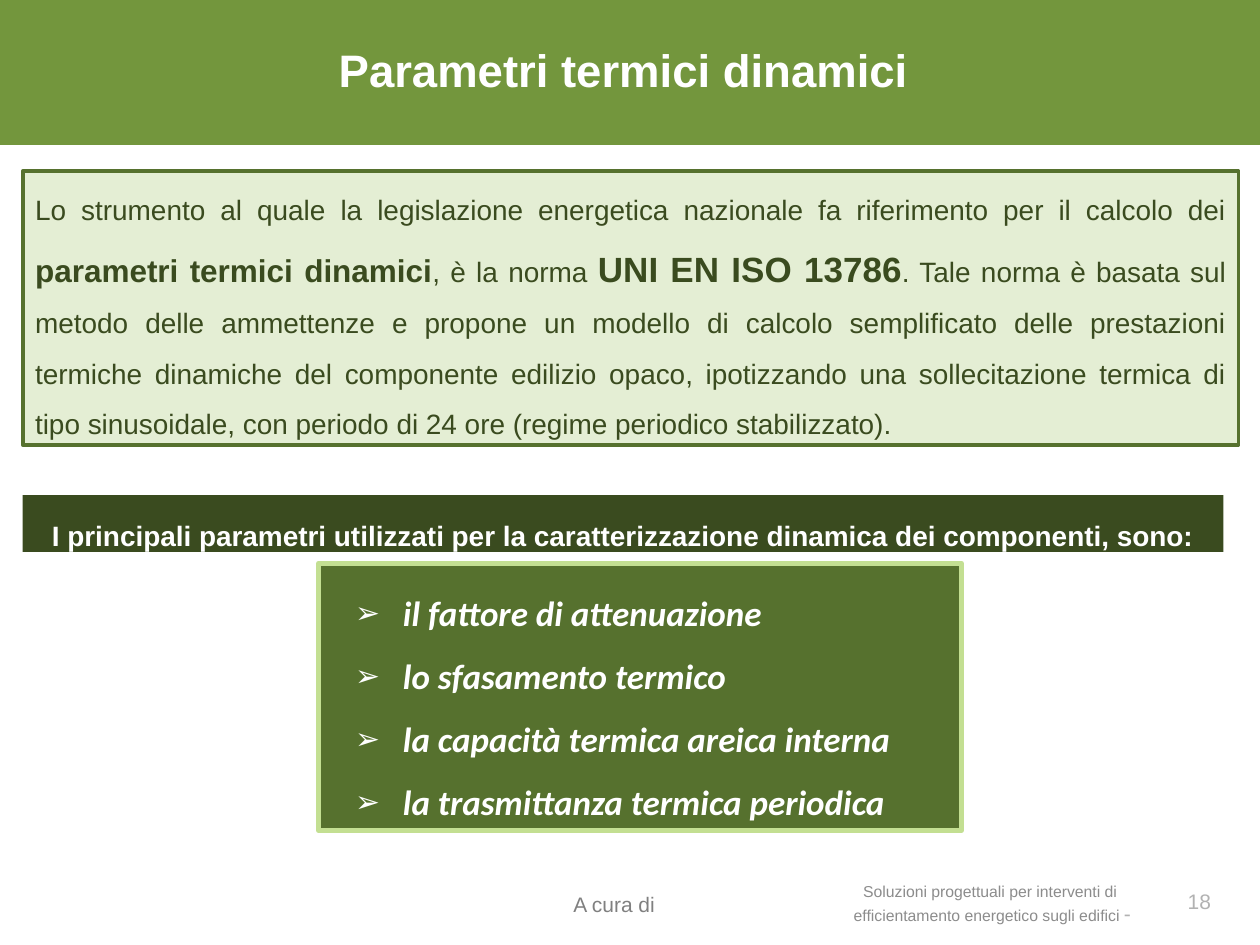
from lxml.etree import SubElement
from pptx import Presentation
from pptx.dml.color import RGBColor
from pptx.enum.shapes import MSO_SHAPE as Shape
from pptx.enum.text import MSO_ANCHOR as Anchor, PP_ALIGN as Align
from pptx.oxml.ns import qn
from pptx.util import Inches, Pt

WHITE = "FFFFFF"
BAND_GREEN = "73963D"
DARK_GREEN = "3A4B1F"
MID_GREEN = "56712E"
PALE_GREEN = "E4EED4"
LIGHT_GREEN = "C3DF92"
DEFAULT_INSETS = (0.1, 0.05, 0.1, 0.05)


def color(value):
    return RGBColor.from_string(value)


def add_box(slide, left, top, width, height, fill, line=None, line_width=1):
    shape = slide.shapes.add_shape(
        Shape.RECTANGLE, Inches(left), Inches(top), Inches(width), Inches(height))
    shape.shadow.inherit = False
    shape.fill.solid()
    shape.fill.fore_color.rgb = color(fill)
    if line:
        shape.line.color.rgb = color(line)
        shape.line.width = Pt(line_width)
    else:
        shape.line.fill.background()
    return shape


def add_text_box(slide, left, top, width, height):
    return slide.shapes.add_textbox(
        Inches(left), Inches(top), Inches(width), Inches(height))


def add_bullet(paragraph, character):
    properties = paragraph._p.get_or_add_pPr()
    properties.set("marL", str(Inches(0.57)))
    properties.set("indent", str(Inches(-0.38)))
    bullet_color = SubElement(properties, qn("a:buClr"))
    SubElement(bullet_color, qn("a:srgbClr"), val=WHITE)
    SubElement(properties, qn("a:buSzPct"), val="85000")
    SubElement(properties, qn("a:buFont"), typeface="Arial")
    SubElement(properties, qn("a:buChar"), char=character)


def add_run(paragraph, text, size, ink, bold=False, italic=False, font="Arial"):
    run = paragraph.add_run()
    run.text = text
    run.font.name = font
    run.font.size = Pt(size)
    run.font.bold = bold
    run.font.italic = italic
    run.font.color.rgb = color(ink)


def write(shape, paragraphs, align=Align.LEFT, anchor=Anchor.MIDDLE,
          spacing=None, bullet=None, insets=DEFAULT_INSETS, **base):
    """Fill a shape; a paragraph is a string or a list of (text, changes) runs."""
    frame = shape.text_frame
    frame.word_wrap = True
    frame.vertical_anchor = anchor
    (frame.margin_left, frame.margin_top,
     frame.margin_right, frame.margin_bottom) = map(Inches, insets)
    for index, content in enumerate(paragraphs):
        paragraph = frame.add_paragraph() if index else frame.paragraphs[0]
        if bullet:
            add_bullet(paragraph, bullet)
        paragraph.alignment = align
        if spacing:
            paragraph.line_spacing = spacing
        runs = [(content, {})] if isinstance(content, str) else content
        for text, changes in runs:
            for number, line in enumerate(text.split("\n")):
                if number:
                    paragraph.add_line_break()
                add_run(paragraph, line, **{**base, **changes})


def add_header(slide):
    add_box(slide, 0, 0, 10, 1.15, BAND_GREEN)
    write(add_text_box(slide, 0.45, 0.33, 9, 0.44), ["Parametri termici dinamici"],
          align=Align.CENTER, insets=(0.1, 0, 0.1, 0), size=26, ink=WHITE, bold=True)


def add_footer(slide):
    top, height = 6.95, 0.4
    insets = (0, 0.05, 0.1, 0)
    write(add_text_box(slide, 4.55, top, 2.2, height), ["A cura di"],
          insets=insets, size=12, ink="808080")
    course = [
        ("Soluzioni progettuali per interventi di \n"
         "efficientamento energetico sugli edifici ", {}),
        ("-", {"size": 12, "ink": "B2B2B2"}),
    ]
    write(add_text_box(slide, 6.71, top, 2.43, height), [course],
          align=Align.CENTER, insets=insets, size=9, ink="8C8C8C")
    write(add_text_box(slide, 9.14, top, 0.57, height), ["18"],
          align=Align.RIGHT, size=12, ink="B2B2B2")


def add_standard(slide):
    standard = [
        ("Lo strumento al quale la legislazione energetica nazionale fa "
         "riferimento per il calcolo dei ", {}),
        ("parametri termici dinamici", {"size": 18, "bold": True}),
        (", è la norma ", {}),
        ("UNI EN ISO 13786", {"size": 20, "bold": True}),
        (". Tale norma è basata sul metodo delle ammettenze e propone un modello "
         "di calcolo semplificato delle prestazioni termiche dinamiche del "
         "componente edilizio opaco, ipotizzando una sollecitazione termica di "
         "tipo sinusoidale, con periodo di 24 ore (regime periodico "
         "stabilizzato).", {}),
    ]
    write(add_box(slide, 0.18, 1.36, 9.65, 2.17, PALE_GREEN, MID_GREEN, 2.25),
          [standard], align=Align.JUSTIFY, spacing=1.5, size=16, ink=DARK_GREEN)


def add_parameters(slide):
    parameters = [
        "il fattore di attenuazione",
        "lo sfasamento termico",
        "la capacità termica areica interna",
        "la trasmittanza termica periodica",
    ]
    write(add_box(slide, 2.53, 4.47, 5.1, 2.12, MID_GREEN, LIGHT_GREEN, 3),
          parameters, align=Align.JUSTIFY, spacing=1.5, bullet="➢",
          size=20, ink=WHITE, bold=True, italic=True, font="Calibri")
    write(add_box(slide, 0.18, 3.93, 9.53, 0.45, DARK_GREEN),
          ["I principali parametri utilizzati per la caratterizzazione dinamica "
           "dei componenti, sono:"],
          align=Align.CENTER, anchor=Anchor.TOP, spacing=1.5,
          size=16, ink=WHITE, bold=True)


def main():
    presentation = Presentation()
    presentation.slide_width = Inches(10)
    presentation.slide_height = Inches(7.5)
    slide = presentation.slides.add_slide(presentation.slide_layouts[6])
    add_header(slide)
    add_footer(slide)
    add_standard(slide)
    add_parameters(slide)
    presentation.save("out.pptx")


if __name__ == "__main__":
    main()
